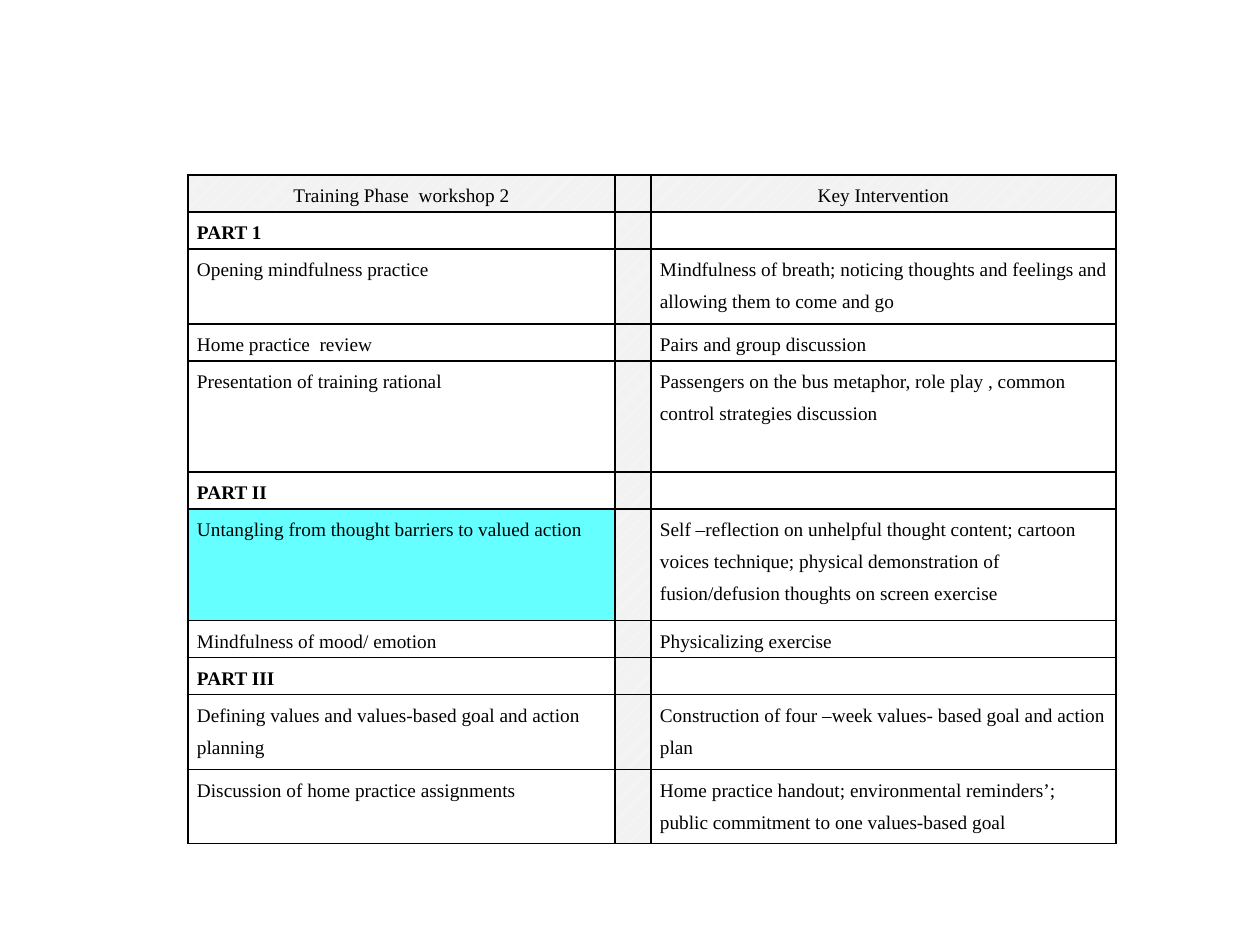
from dataclasses import dataclass
from itertools import accumulate, pairwise

from lxml.etree import SubElement
from pptx import Presentation
from pptx.dml.color import RGBColor
from pptx.enum.dml import MSO_PATTERN
from pptx.enum.text import MSO_ANCHOR, PP_ALIGN
from pptx.oxml import parse_xml
from pptx.oxml.ns import nsdecls, qn
from pptx.table import Table, _Cell
from pptx.util import Emu, Pt

SCALE = 914400 / 126


@dataclass(frozen=True)
class Theme:
    font: str = "Times New Roman"
    size: int = 11
    ink: str = "000000"
    shade: str = "F2F2F2"
    hatch: str = "FFFFFF"
    mark: str = "66FFFF"
    rule: int = 1
    lead: float = 1.5


@dataclass(frozen=True)
class Row:
    phase: str
    key: str = ""
    lines: int = 1
    head: bool = False
    bold: bool = False
    mark: bool = False


THEME = Theme()
LEFT, TOP, HIGH = 188, 175, 669
COLS = (427, 36, 465)
PAD = 9
ROWS = (
    Row("Training Phase  workshop 2", "Key Intervention", head=True),
    Row("PART 1", bold=True),
    Row("Opening mindfulness practice",
        "Mindfulness of breath; noticing thoughts and feelings and allowing them to come and go", 2),
    Row("Home practice  review", "Pairs and group discussion"),
    Row("Presentation of training rational",
        "Passengers on the bus metaphor, role play , common control strategies discussion", 3),
    Row("PART II", bold=True),
    Row("Untangling from thought barriers to valued action",
        "Self –reflection on unhelpful thought content; cartoon voices technique; "
        "physical demonstration of fusion/defusion thoughts on screen exercise", 3, mark=True),
    Row("Mindfulness of mood/ emotion", "Physicalizing exercise"),
    Row("PART III", bold=True),
    Row("Defining values and values-based goal and action planning",
        "Construction of four –week values- based goal and action plan", 2),
    Row("Discussion of home practice assignments",
        "Home practice handout; environmental reminders’; public commitment to one values-based goal", 2),
)


def px(count: int) -> Emu:
    return Emu(round(count * SCALE))


def color(code: str) -> RGBColor:
    return RGBColor.from_string(code)


def apply(target: object, values: dict[str, object]) -> None:
    for name, value in values.items():
        setattr(target, name, value)


def frame(cell: _Cell) -> None:
    """Rule all four sides; the lines must come before the fill."""
    props = cell._tc.get_or_add_tcPr()
    for spot, side in enumerate("LRTB"):
        props.insert(spot, parse_xml(
            f'<a:ln{side} {nsdecls("a")} w="{Pt(THEME.rule)}"><a:solidFill>'
            f'<a:srgbClr val="{THEME.ink}"/></a:solidFill></a:ln{side}>'))


def paint(cell: _Cell, row: Row, col: int) -> None:
    fill = cell.fill
    if row.head or col == 1:
        fill.patterned()
        fill.pattern = MSO_PATTERN.PERCENT_5
        fill.fore_color.rgb = color(THEME.hatch)
        fill.back_color.rgb = color(THEME.shade)
    elif row.mark and col == 0:
        fill.solid()
        fill.fore_color.rgb = color(THEME.mark)
    else:
        fill.background()


def write(cell: _Cell, text: str, row: Row) -> None:
    apply(cell, {"margin_left": px(PAD), "margin_right": px(PAD), "margin_top": 0,
                 "margin_bottom": 0, "vertical_anchor": MSO_ANCHOR.TOP})
    para = cell.text_frame.paragraphs[0]
    apply(para, {"line_spacing": THEME.lead,
                 "alignment": PP_ALIGN.CENTER if row.head else PP_ALIGN.LEFT})
    if text:
        run = para.add_run()
        run.text = text
        apply(run.font, {"name": THEME.font, "size": Pt(THEME.size), "bold": row.bold})
        run.font.color.rgb = color(THEME.ink)
    else:
        # The end mark's size keeps an empty cell from growing its row.
        SubElement(para._p, qn("a:endParaRPr"), sz=str(THEME.size * 100))


def fit(table: Table) -> None:
    """Share the height out by the line count of each row."""
    apply(table, {"first_row": False, "horz_banding": False})
    for column, width in zip(table.columns, COLS):
        column.width = px(width)
    sums = list(accumulate((row.lines for row in ROWS), initial=0))
    edges = [round(HIGH * count / sums[-1]) for count in sums]
    for line, (start, end) in zip(table.rows, pairwise(edges)):
        line.height = px(end - start)


def main() -> None:
    deck = Presentation()
    apply(deck, {"slide_width": px(1260), "slide_height": px(945)})
    slide = deck.slides.add_slide(deck.slide_layouts[6])
    table = slide.shapes.add_table(len(ROWS), len(COLS), px(LEFT), px(TOP),
                                   px(sum(COLS)), px(HIGH)).table
    fit(table)
    for index, row in enumerate(ROWS):
        for col, text in enumerate((row.phase, "", row.key)):
            cell = table.cell(index, col)
            write(cell, text, row)
            paint(cell, row, col)
            frame(cell)
    deck.save("out.pptx")


if __name__ == "__main__":
    main()
